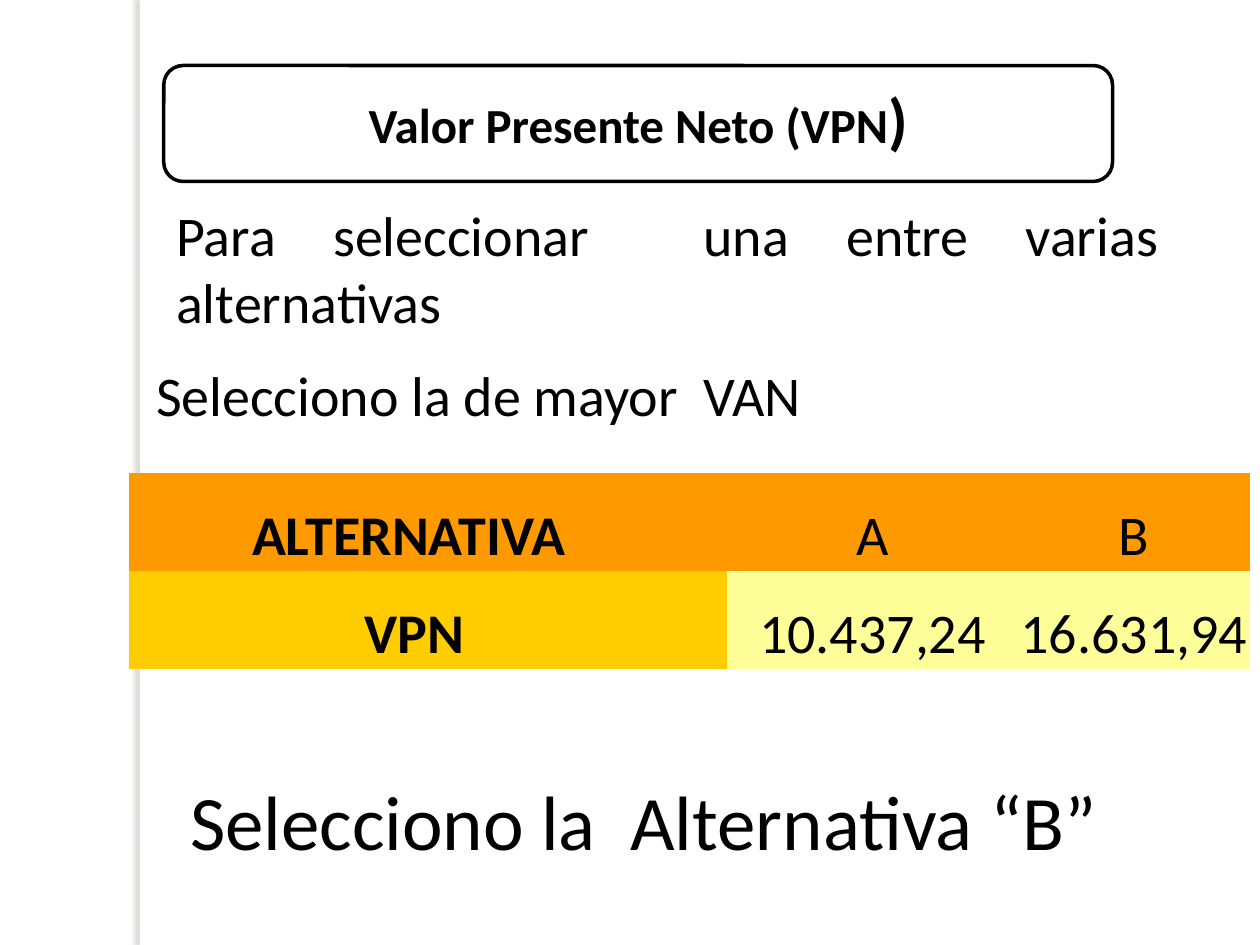
import pptx
import pptx.util
import pptx.dml.color
import pptx.enum.shapes
import pptx.enum.text
import pptx.oxml
import pptx.oxml.ns
from pptx.util import Inches

COLORS = {
    "white": "FFFFFF",
    "black": "000000",
    "shadow": "736F63",
    "header": "FF9900",
    "label": "FFCC00",
    "value": "FFFF99",
}
FONT = "Calibri"
NO_STYLE = "{2D5ABB26-0587-4C30-8999-92F81FD0307C}"
ALIGN = pptx.enum.text.PP_ALIGN
ANCHOR = pptx.enum.text.MSO_ANCHOR
SHAPE = pptx.enum.shapes.MSO_SHAPE


def color(name):
    return pptx.dml.color.RGBColor.from_string(COLORS[name])


def fill_with(target, name):
    target.fill.solid()
    target.fill.fore_color.rgb = color(name)


def format_span(span, size, bold=False):
    span.font.name = FONT
    span.font.size = pptx.util.Pt(size)
    span.font.bold = bold
    span.font.color.rgb = color("black")


def add_side_strip(page, left, top, width, height):
    """White strip whose soft shadow falls to the left."""
    strip = page.shapes.add_shape(SHAPE.RECTANGLE, left, top, width, height)
    fill_with(strip, "white")
    strip.line.fill.background()
    strip.shadow.inherit = False
    effects = strip.element.spPr.find(pptx.oxml.ns.qn("a:effectLst"))
    effects.append(pptx.oxml.parse_xml(
        f'<a:outerShdw {pptx.oxml.ns.nsdecls("a")} blurRad="38100" dist="38100" '
        f'dir="10800000" rotWithShape="0"><a:srgbClr val="{COLORS["shadow"]}">'
        '<a:alpha val="25000"/></a:srgbClr></a:outerShdw>'))


def add_title(page, left, top, width, height):
    frame = page.shapes.add_shape(SHAPE.ROUNDED_RECTANGLE, left, top, width, height)
    frame.shadow.inherit = False
    fill_with(frame, "white")
    frame.line.color.rgb = color("black")
    frame.line.width = pptx.util.Pt(2)
    text = frame.text_frame
    text.word_wrap = True
    text.vertical_anchor = ANCHOR.MIDDLE
    paragraph = text.paragraphs[0]
    paragraph.alignment = ALIGN.CENTER
    paragraph.line_spacing = 0.9
    for words, size in (("Valor Presente Neto (VPN", 28), (")", 36)):
        span = paragraph.add_run()
        span.text = words
        format_span(span, size, bold=True)


def add_statement(page, left, top, width, height, words, size, align=ALIGN.LEFT):
    box = page.shapes.add_textbox(left, top, width, height)
    box.text_frame.word_wrap = True
    box.text_frame.text = words
    paragraph = box.text_frame.paragraphs[0]
    paragraph.alignment = align
    format_span(paragraph.runs[0], size)


def add_comparison(page, left, top, width, height):
    rows = [("ALTERNATIVA", "A", "B"), ("VPN", "10.437,24", "16.631,94")]
    fills = [("header", "header", "header"), ("label", "value", "value")]
    label_insets = (0.31, 0.22)
    frame = page.shapes.add_table(2, 3, left, top, width, height)
    table = frame.table
    style = table._tbl.tblPr.find(pptx.oxml.ns.qn("a:tableStyleId"))
    style.text = NO_STYLE
    for column, size in zip(table.columns, (4.75, 2.31, 1.84)):
        column.width = Inches(size)
    for r, row in enumerate(rows):
        for c, words in enumerate(row):
            cell = table.cell(r, c)
            fill_with(cell, fills[r][c])
            cell.vertical_anchor = ANCHOR.BOTTOM
            cell.margin_left = cell.margin_top = Inches(0.01)
            cell.margin_right = Inches(label_insets[r] if c == 0 else 0.01)
            cell.margin_bottom = 0
            cell.text_frame.text = words
            paragraph = cell.text_frame.paragraphs[0]
            paragraph.alignment = ALIGN.CENTER
            format_span(paragraph.runs[0], 32, bold=c == 0)


def main():
    deck = pptx.Presentation()
    deck.slide_width, deck.slide_height = Inches(10), Inches(7.5)
    page = deck.slides.add_slide(deck.slide_layouts[6])
    add_side_strip(page, Inches(1.11), 0, Inches(0.08), Inches(7.5))
    add_statement(page, Inches(1.14), Inches(2.81), Inches(8.28), Inches(0.64),
                  "Selecciono la de mayor  VAN", 32)
    add_statement(page, Inches(1.3), Inches(1.54), Inches(8), Inches(1.18),
                  "Para seleccionar  una entre varias alternativas", 32, ALIGN.JUSTIFY)
    add_title(page, Inches(1.3), Inches(0.52), Inches(7.53), Inches(0.92))
    add_comparison(page, Inches(1.02), Inches(3.75), Inches(8.9), Inches(1.56))
    add_statement(page, Inches(1.41), Inches(6.09), Inches(8.59), Inches(0.84),
                  "Selecciono la  Alternativa “B”", 44)
    deck.save("out.pptx")


if __name__ == "__main__":
    main()
